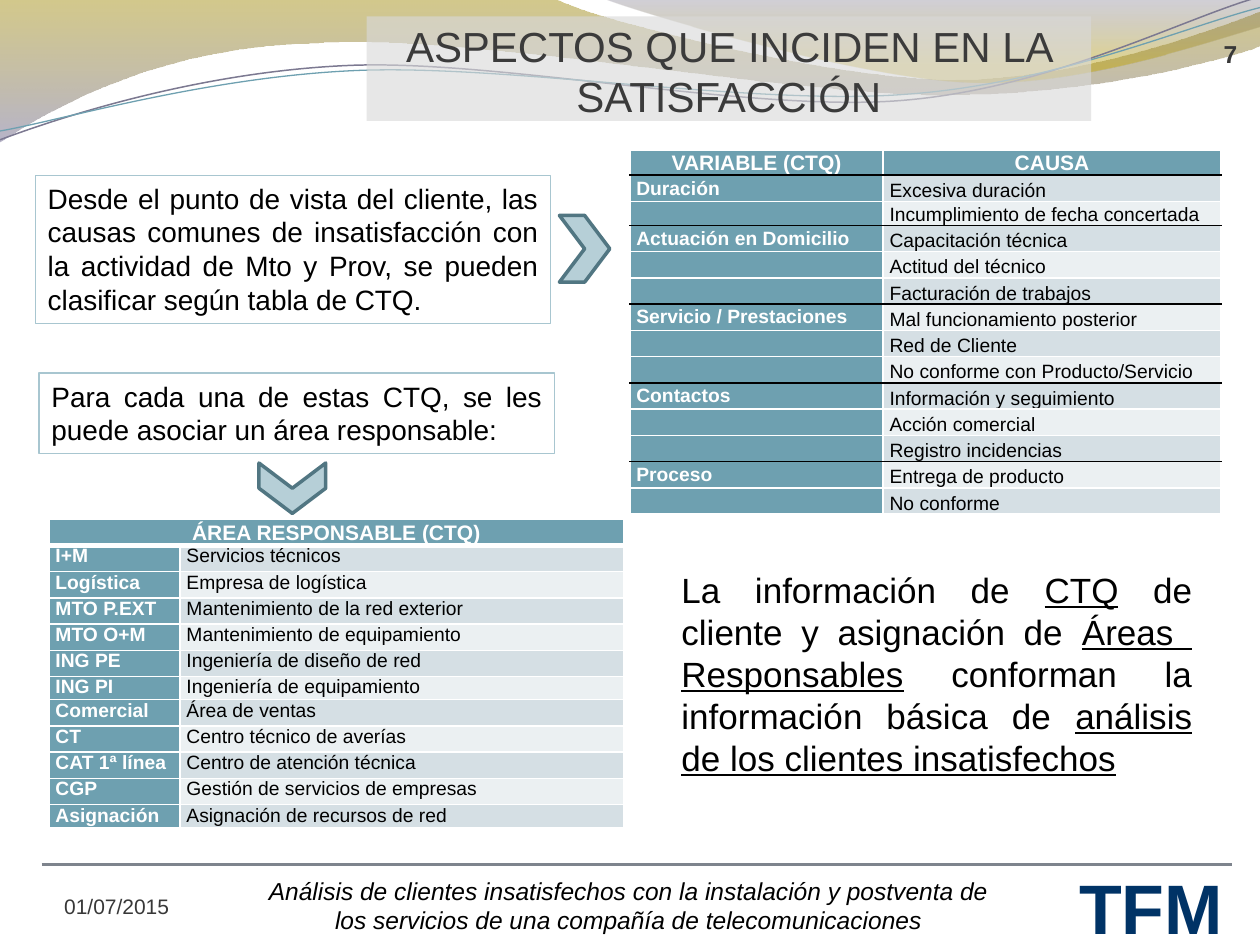
from dataclasses import dataclass

from lxml import etree
from pptx import Presentation
from pptx.dml.color import RGBColor
from pptx.enum.shapes import MSO_CONNECTOR, MSO_SHAPE
from pptx.enum.text import MSO_ANCHOR, MSO_AUTO_SIZE, PP_ALIGN
from pptx.oxml.ns import qn
from pptx.util import Inches, Pt

LEFT, CENTER, RIGHT, JUSTIFY = PP_ALIGN.LEFT, PP_ALIGN.CENTER, PP_ALIGN.RIGHT, PP_ALIGN.JUSTIFY
TOP, MIDDLE, BOTTOM = MSO_ANCHOR.TOP, MSO_ANCHOR.MIDDLE, MSO_ANCHOR.BOTTOM
RECTANGLE, CHEVRON = MSO_SHAPE.RECTANGLE, MSO_SHAPE.CHEVRON
STRAIGHT = MSO_CONNECTOR.STRAIGHT
GROW = MSO_AUTO_SIZE.SHAPE_TO_FIT_TEXT
ROW = 5 / 24


@dataclass(frozen=True)
class Theme:
    font: str = "Arial"
    black: str = "000000"
    white: str = "FFFFFF"
    teal: str = "6EA0B0"
    teal_dark: str = "517682"
    teal_light: str = "A8C6D0"
    band_odd: str = "D5DFE4"
    band_even: str = "EBF0F2"
    title_fill: str = "D9D9D9"
    title_text: str = "3B3B3B"
    small_text: str = "383838"
    navy: str = "003366"
    navy_edge: str = "6599AA"
    gold: str = "9E8700"
    gold_bright: str = "BDA100"
    purple: str = "7B769C"
    purple_dark: str = "66627C"
    purple_line: str = "7C7991"
    rule: str = "7E848D"
    acronym: int = 40
    title: int = 24
    conclusion: int = 20
    body: int = 16
    footer: int = 14
    small: int = 12
    cell: int = 11


THEME = Theme()


def rgb(code):
    return RGBColor.from_string(code)


def xml_child(parent, tag, **attributes):
    return etree.SubElement(parent, qn(tag), {key: str(value) for key, value in attributes.items()})


def add_alpha(color_owner, percent):
    for color in color_owner.iter(qn("a:srgbClr")):
        xml_child(color, "a:alpha", val=percent * 1000)


def write(frame, text, size=THEME.body, color=THEME.black, bold=False, italic=False,
          align=LEFT, anchor=TOP, insets=None, grow=False, wrap=True, after=None):
    frame.word_wrap = wrap
    frame.vertical_anchor = anchor
    if grow:
        frame.auto_size = GROW
    if insets:
        frame.margin_left, frame.margin_top, frame.margin_right, frame.margin_bottom = map(Inches, insets)
    paragraph = frame.paragraphs[0]
    paragraph.alignment = align
    if after is not None:
        paragraph.space_after = Pt(after)
    pieces = [(text, False)] if isinstance(text, str) else text
    for words, underlined in pieces:
        for number, line in enumerate(words.split("\n")):
            if number:
                paragraph.add_line_break()
            run = paragraph.add_run()
            run.text = line
            font = run.font
            font.name, font.size, font.bold, font.italic = THEME.font, Pt(size), bold, italic
            font.color.rgb = rgb(color)
            if underlined:
                font.underline = True
    return paragraph


class SlideBuilder:
    def __init__(self, slide, theme):
        self.shapes = slide.shapes
        self.theme = theme

    def text(self, box, words, **style):
        label = self.shapes.add_textbox(*map(Inches, box))
        return write(label.text_frame, words, **style)

    def shape(self, kind, box, fill=None, alpha=100, line=None, width=0.75, rotation=0):
        figure = self.shapes.add_shape(kind, *map(Inches, box))
        figure.rotation = rotation
        self.paint(figure, line, width)
        if fill:
            figure.fill.solid()
            figure.fill.fore_color.rgb = rgb(fill)
            add_alpha(figure.fill._xPr.find(qn("a:solidFill")), alpha)
        return figure

    def paint(self, figure, line, width):
        figure.shadow.inherit = False
        figure.fill.background()
        if line:
            figure.line.color.rgb = rgb(line)
            figure.line.width = Pt(width)
        else:
            figure.line.fill.background()

    def wave(self, start, segments, stops=None, line=None, width=0.75):
        outline = self.shapes.build_freeform(*map(Inches, start))
        outline.add_line_segments([tuple(map(Inches, segment[-2:])) for segment in segments],
                                  close=bool(stops))
        figure = outline.convert_to_shape()
        sides = list(figure._element.iter(qn("a:lnTo")))
        for side, segment in zip(sides, segments):
            if len(segment) == 6:
                curve = etree.Element(qn("a:cubicBezTo"))
                for x, y in zip(segment[::2], segment[1::2]):
                    xml_child(curve, "a:pt", x=Inches(x) - figure.left, y=Inches(y) - figure.top)
                side.getparent().replace(side, curve)
        self.paint(figure, line, width)
        if stops:
            figure.fill.gradient()
            figure.fill.gradient_angle = 270
            for stop, (position, color, alpha) in zip(figure.fill.gradient_stops, stops):
                stop.position = position
                stop.color.rgb = rgb(color)
                add_alpha(stop._gs, alpha)

    def rule(self, x1, x2, y):
        line = self.shapes.add_connector(STRAIGHT, Inches(x1), Inches(y), Inches(x2), Inches(y))
        line.line.color.rgb = rgb(self.theme.rule)
        line.line.width = Pt(2)
        xml_child(line._element.spPr, "a:effectLst")

    def cell(self, cell, words, fill, borders, **style):
        properties = cell._tc.get_or_add_tcPr()
        for side, (color, width) in zip("LRTB", borders):
            edge = xml_child(properties, f"a:ln{side}", w=Pt(width))
            xml_child(xml_child(edge, "a:solidFill"), "a:srgbClr", val=color)
        cell.fill.solid()
        cell.fill.fore_color.rgb = rgb(fill)
        anchor = style.pop("anchor")
        if words:
            write(cell.text_frame, words, **style)
        else:
            xml_child(cell.text_frame.paragraphs[0]._p, "a:endParaRPr", sz=self.theme.cell * 100)
        cell.vertical_anchor = anchor
        cell.margin_left = cell.margin_right = Inches(0.05)
        cell.margin_top = cell.margin_bottom = 0

    def table(self, position, widths, heights, header, rows, anchors, rules=(), header_gap=1):
        theme = self.theme
        table = self.shapes.add_table(len(heights), 2, *map(Inches, position),
                                      Inches(sum(widths)), Inches(sum(heights))).table
        table.first_row = table.horz_banding = False
        for column, width in zip(table.columns, widths):
            column.width = Inches(width)
        for row, height in zip(table.rows, heights):
            row.height = Inches(height)
        white = (theme.white, 1)
        for r, pair in enumerate([header] + rows):
            top, bottom = ((theme.black, 1) if edge in rules else white for edge in (r, r + 1))
            if header_gap > 1 and r < 2:
                top, bottom = (white, (theme.white, header_gap))[::1 if r == 0 else -1]
            for c, words in enumerate(pair):
                is_label = r == 0 or c == 0
                band = theme.band_odd if r % 2 else theme.band_even
                style = (dict(size=theme.small, align=CENTER, after=6, anchor=BOTTOM) if r == 0
                         else dict(size=theme.cell, anchor=anchors[c]))
                self.cell(table.cell(r, c), words, theme.teal if is_label else band,
                          (white, white, top, bottom), bold=is_label,
                          color=theme.white if is_label else theme.black, **style)
        if not header[1]:
            table.cell(0, 0).merge(table.cell(0, 1))


CAUSES = {
    "Duración": ["Excesiva duración", "Incumplimiento de fecha concertada"],
    "Actuación en Domicilio": ["Capacitación técnica", "Actitud del técnico", "Facturación de trabajos"],
    "Servicio / Prestaciones": ["Mal funcionamiento posterior", "Red de Cliente",
                                "No conforme con Producto/Servicio"],
    "Contactos": ["Información y seguimiento", "Acción comercial", "Registro incidencias"],
    "Proceso": ["Entrega de producto", "No conforme"],
}
AREAS = [
    ("I+M", "Servicios técnicos"), ("Logística", "Empresa de logística"),
    ("MTO P.EXT", "Mantenimiento de la red exterior"), ("MTO O+M", "Mantenimiento de equipamiento"),
    ("ING PE", "Ingeniería de diseño de red"), ("ING PI", "Ingeniería de equipamiento"),
    ("Comercial", "Área de ventas"), ("CT", "Centro técnico de averías"),
    ("CAT 1ª línea", "Centro de atención técnica"), ("CGP", "Gestión de servicios de empresas"),
    ("Asignación", "Asignación de recursos de red"),
]
STATEMENTS = [
    ((0.28, 1.39, 4.09, 1.18), "Desde el punto de vista del cliente, las causas comunes de insatisfacción con "
                               "la actividad de Mto y Prov, se pueden clasificar según tabla de CTQ."),
    ((0.31, 2.96, 4.09, 0.64), "Para cada una de estas CTQ, se les puede asociar un área responsable:"),
]
CONCLUSION = [("La información de ", False), ("CTQ", True), (" de cliente y asignación de ", False),
              ("Áreas \nResponsables", True), (" conforman la información básica de ", False),
              ("análisis de los clientes insatisfechos", True)]


def draw_background(page):
    page.wave((0, 0), [(4.4, -0.01), (4.76, 0.17, 6.64, 0.63, 7.58, 0.63), (8.53, 0.63, 9.58, 0.26, 10, 0.09),
                       (10.01, 0.36), (9.83, 0.44, 8.7, 0.76, 7.46, 0.75), (6.22, 0.75, 3.82, 0.28, 2.57, 0.34),
                       (1.29, 0.36, 0.46, 0.83, -0.01, 1.13), (0, 0)],
              stops=[(0, THEME.gold, 45), (1, THEME.purple, 55)])
    page.wave((4.79, -0.01), [(5.09, 0.11, 6.82, 0.62, 7.69, 0.65), (8.56, 0.69, 9.61, 0.32, 10, 0.21),
                              (10, 0), (4.79, -0.01)],
              stops=[(0, THEME.purple_dark, 30), (0.8, THEME.gold_bright, 45)])
    page.wave((0, 1.11), [(0.48, 0.93, 1.58, 0.57, 2.77, 0.52), (3.95, 0.47, 5.93, 0.89, 7.13, 0.8),
                          (8.33, 0.71, 9.38, 0.15, 9.98, -0.02)], line=THEME.purple_line, width=0.85)
    page.wave((0, 1.04), [(0.47, 0.96, 1.64, 0.61, 2.83, 0.56), (4.03, 0.51, 5.97, 0.84, 7.17, 0.75),
                          (8.36, 0.67, 9.41, 0.21, 10, 0.06)], line=THEME.teal)


def draw_frame(page):
    acronym = page.text((8.46, 6.81, 1.35, 0.67), "TFM", size=THEME.acronym, color=THEME.navy, bold=True,
                        align=CENTER, grow=True, wrap=False)
    edge = etree.Element(qn("a:ln"), w=str(Pt(0.83)))
    xml_child(xml_child(edge, "a:solidFill"), "a:srgbClr", val=THEME.navy_edge)
    acronym.runs[0].font._element.insert(0, edge)
    page.text((1.96, 6.9, 6.06, 0.57), "Análisis de clientes insatisfechos con la instalación y postventa de "
              "los servicios de una compañía de telecomunicaciones",
              size=THEME.footer, italic=True, align=CENTER, grow=True)
    page.rule(0.33, 9.78, 6.86)
    title = page.shape(RECTANGLE, (2.91, 0.13, 5.75, 0.83), fill=THEME.title_fill, alpha=63)
    write(title.text_frame, "ASPECTOS QUE INCIDEN EN LA SATISFACCIÓN", size=THEME.title,
          color=THEME.title_text, align=CENTER, anchor=BOTTOM, insets=(0, 0.05, 0, 0))
    corner = dict(color=THEME.small_text, anchor=BOTTOM, insets=(0, 0, 0, 0))
    page.text((0.51, 6.89, 1.27, 0.4), "01/07/2015", size=THEME.small, **corner)
    page.text((8.99, 0.14, 0.83, 0.4), "7", size=THEME.footer, bold=True, align=RIGHT, **corner)


def draw_content(page):
    cause_rows, group_starts = [], []
    for variable, causes in CAUSES.items():
        group_starts.append(len(cause_rows) + 1)
        cause_rows += [(variable if i == 0 else "", cause) for i, cause in enumerate(causes)]
    page.table((5, 1.19), (2.01, 2.68), [0.18, ROW, 0.19] + [ROW] * 11, ("VARIABLE (CTQ)", "CAUSA"),
               cause_rows, (MIDDLE, BOTTOM), rules=group_starts)
    page.table((0.39, 4.12), (1.04, 3.52), [ROW] * 6 + [0.18] + [ROW] * 4 + [0.18],
               ("ÁREA RESPONSABLE (CTQ)", ""), AREAS, (TOP, TOP), header_gap=3)
    for box, words in STATEMENTS:
        statement = page.shape(RECTANGLE, box, line=THEME.teal_light)
        write(statement.text_frame, words, align=JUSTIFY, grow=True)
    page.text((5.31, 4.46, 4.25, 1.78), CONCLUSION, size=THEME.conclusion, align=JUSTIFY, grow=True)
    for x, y, rotation in ((4.44, 1.71, 0), (2.12, 3.61, 90)):
        page.shape(CHEVRON, (x, y, 0.4, 0.53), fill=THEME.teal, alpha=50,
                   line=THEME.teal_dark, width=2, rotation=rotation)


def main():
    deck = Presentation()
    deck.slide_width, deck.slide_height = Inches(10), Inches(7.5)
    page = SlideBuilder(deck.slides.add_slide(deck.slide_layouts[6]), THEME)
    draw_background(page)
    draw_frame(page)
    draw_content(page)
    deck.save("out.pptx")


if __name__ == "__main__":
    main()
